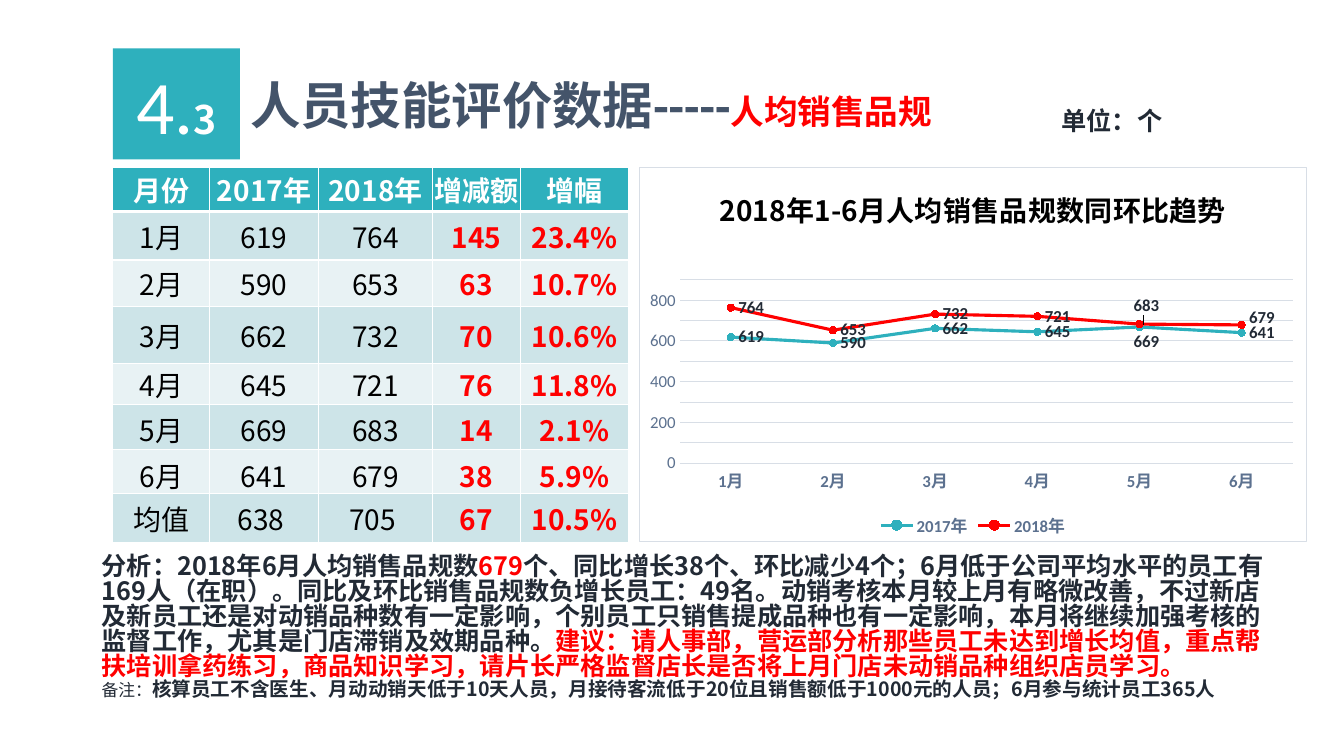
from lxml import etree
from pptx import Presentation
from pptx.chart.data import CategoryChartData
from pptx.dml.color import RGBColor
from pptx.enum.chart import XL_CHART_TYPE as Chart, XL_LABEL_POSITION as LabelPos
from pptx.enum.chart import XL_LEGEND_POSITION as LegendPos, XL_MARKER_STYLE as Marker
from pptx.enum.chart import XL_TICK_MARK as Tick
from pptx.enum.shapes import MSO_SHAPE as Shape
from pptx.enum.text import MSO_ANCHOR as Anchor, MSO_AUTO_SIZE as AutoSize, PP_ALIGN as Align
from pptx.oxml import parse_xml
from pptx.oxml.ns import nsdecls, qn
from pptx.util import Inches, Pt

TEAL = RGBColor(0x2E, 0xB0, 0xBD)
RED = RGBColor(0xFF, 0x00, 0x00)
WHITE = RGBColor(0xFF, 0xFF, 0xFF)
BLACK = RGBColor(0x00, 0x00, 0x00)
INK = RGBColor(0x22, 0x2A, 0x35)
SLATE = RGBColor(0x44, 0x54, 0x6A)
AXIS = RGBColor(0x5C, 0x71, 0x8F)
RULE = RGBColor(0xD8, 0xDE, 0xE6)
BANDS = RGBColor(0xE8, 0xF2, 0xF4), RGBColor(0xCD, 0xE4, 0xE8)
LATIN, CJK = "Calibri", "Noto Sans CJK SC"

HEADERS = ["月份", "2017年", "2018年", "增减额", "增幅"]
ROWS = [
    ["1月", "619", "764", "145", "23.4%"],
    ["2月", "590", "653", "63", "10.7%"],
    ["3月", "662", "732", "70", "10.6%"],
    ["4月", "645", "721", "76", "11.8%"],
    ["5月", "669", "683", "14", "2.1%"],
    ["6月", "641", "679", "38", "5.9%"],
    ["均值", "638 ", "705 ", "67", "10.5%"],
]
COL_WIDTHS = [0.96, 1.08, 1.13, 0.87, 1.08]
ROW_HEIGHTS = [0.44, 0.48, 0.46, 0.57, 0.4, 0.45, 0.39, 0.49]
TIGHT_ROWS = 5  # the rows from the top whose cells have no margins


def style(font, size, color, bold=False, name=LATIN):
    font.size, font.bold, font.name = Pt(size), bold, name
    font.color.rgb = color


def rule_xml():
    return (f'<a:ln {nsdecls("a")} w="{Pt(0.75)}"><a:solidFill>'
            f'<a:srgbClr val="{RULE}"/></a:solidFill></a:ln>')


def manual_layout(x, y, extra=""):
    return parse_xml(f'<c:layout {nsdecls("c")}><c:manualLayout>{extra}'
                     f'<c:x val="{x}"/><c:y val="{y}"/></c:manualLayout></c:layout>')


class Page:
    """The current slide; places are given in percent of its size."""

    def __init__(self, prs):
        self.prs = prs
        self.s = prs.slides.add_slide(prs.slide_layouts[5])

    def box(self, x, y, w, h):
        width, height = self.prs.slide_width, self.prs.slide_height
        return [int(v * side / 100) for v, side in
                ((x, width), (y, height), (w, width), (h, height))]

    def runs(self, p, parts):
        for text, size, color, bold, name in parts:
            r = p.add_run()
            r.text = text
            style(r.font, size, color, bold, name)
            ea = etree.SubElement(r.font._element, qn("a:ea"))
            ea.set("typeface", CJK)

    def title(self, place, parts):
        sp = self.s.shapes.title
        sp.left, sp.top, sp.width, sp.height = self.box(*place)
        tf = sp.text_frame
        tf.auto_size, tf.vertical_anchor = AutoSize.NONE, Anchor.TOP
        tf.paragraphs[0].alignment = Align.LEFT
        self.runs(tf.paragraphs[0], parts)

    def badge(self, place, parts):
        sp = self.s.shapes.add_shape(Shape.RECTANGLE, *self.box(*place))
        sp.shadow.inherit = False
        sp.fill.solid()
        sp.fill.fore_color.rgb = TEAL
        sp.line.fill.background()
        sp.text_frame.vertical_anchor = Anchor.MIDDLE
        p = sp.text_frame.paragraphs[0]
        p.alignment = Align.CENTER
        self.runs(p, parts)

    def text(self, place, paragraphs, spacing=1.0):
        tf = self.s.shapes.add_textbox(*self.box(*place)).text_frame
        tf.word_wrap = True
        for i, parts in enumerate(paragraphs):
            p = tf.add_paragraph() if i else tf.paragraphs[0]
            p.line_spacing = spacing
            self.runs(p, parts)

    def borders(self, cell, row):
        tc_pr = cell._tc.get_or_add_tcPr()
        widths = {"L": 1, "R": 1, "T": 3 if row == 1 else 1, "B": 3 if row == 0 else 1}
        for i, (side, width) in enumerate(widths.items()):
            tc_pr.insert(i, parse_xml(
                f'<a:ln{side} {nsdecls("a")} w="{Pt(width)}"><a:solidFill>'
                f'<a:srgbClr val="{WHITE}"/></a:solidFill></a:ln{side}>'))

    def table(self, place, rows):
        table = self.s.shapes.add_table(len(rows), len(rows[0]), *self.box(*place)).table
        for col, width in zip(table.columns, COL_WIDTHS):
            col.width = Inches(width)
        for i, (row, height) in enumerate(zip(table.rows, ROW_HEIGHTS)):
            row.height = Inches(height)
            for j, cell in enumerate(row.cells):
                cell.fill.solid()
                cell.fill.fore_color.rgb = BANDS[i % 2] if i else TEAL
                cell.vertical_anchor = Anchor.MIDDLE
                if i < TIGHT_ROWS:
                    cell.margin_left = cell.margin_right = 0
                    cell.margin_top = cell.margin_bottom = 0
                self.borders(cell, i)
                color = WHITE if i == 0 else RED if j > 2 else BLACK
                p = cell.text_frame.paragraphs[0]
                p.alignment = Align.CENTER
                self.runs(p, [(rows[i][j], 20, color, i == 0 or j > 2, CJK)])

    def line_chart(self, place, title, cats, series):
        data = CategoryChartData()
        data.categories = cats
        for name, values, *_ in series:
            data.add_series(name, values)
        chart = self.s.shapes.add_chart(Chart.LINE_MARKERS, *self.box(*place), data).chart
        style(chart.font, 10, INK)
        # Title, legend and frame
        chart.has_title = True
        self.runs(chart.chart_title.text_frame.paragraphs[0], [(title, 20, BLACK, True, CJK)])
        chart.has_legend = True
        chart.legend.position = LegendPos.BOTTOM
        chart.legend.include_in_layout = False
        style(chart.legend.font, 12, AXIS, True)
        chart._chartSpace.find(qn("c:chart")).addnext(parse_xml(
            f'<c:spPr {nsdecls("c", "a")}><a:solidFill><a:srgbClr val="{WHITE}"/></a:solidFill>'
            f'{rule_xml()}</c:spPr>'))
        # Plot area
        area = chart._chartSpace.find(".//" + qn("c:plotArea"))
        for old in area.findall(qn("c:layout")):
            area.remove(old)
        layout = manual_layout(0.06, 0.3, '<c:layoutTarget val="inner"/>'
                               '<c:xMode val="edge"/><c:yMode val="edge"/>')
        for tag, size in (("c:w", 0.92), ("c:h", 0.49)):
            etree.SubElement(layout[0], qn(tag)).set("val", str(size))
        area.insert(0, layout)
        # Axes
        cat, val = chart.category_axis, chart.value_axis
        for axis in (cat, val):
            axis.major_tick_mark = axis.minor_tick_mark = Tick.NONE
            style(axis.tick_labels.font, 12, AXIS, axis is cat)
        val.minimum_scale, val.maximum_scale = 0, 900
        val.major_unit, val.minor_unit = 200, 100
        val.has_major_gridlines = val.has_minor_gridlines = True
        val.format.line.fill.background()
        for line in (cat.format.line, val.major_gridlines.format.line):
            line.color.rgb, line.width = RULE, Pt(0.75)
        area.find(".//" + qn("c:minorGridlines")).append(parse_xml(
            f'<c:spPr {nsdecls("c")}>{rule_xml()}</c:spPr>'))
        # Series, with the crowded labels moved aside
        chart.plots[0].vary_by_categories = False
        for ser, (_, _, color, shifts) in zip(chart.plots[0].series, series):
            ser.smooth = False
            ser.format.line.color.rgb, ser.format.line.width = color, Pt(2.25)
            ser.marker.style, ser.marker.size = Marker.CIRCLE, 5
            ser.marker.format.fill.solid()
            ser.marker.format.fill.fore_color.rgb = color
            ser.marker.format.line.color.rgb = color
            labels = ser.data_labels
            labels.show_value = True
            for label in (labels, *(ser.points[i].data_label for i in shifts)):
                label.position = LabelPos.RIGHT
                style(label.font, 12, INK, True)
            for item in ser._element.iter(qn("c:dLbl")):
                idx = item.find(qn("c:idx"))
                idx.addnext(manual_layout(*shifts[int(idx.get("val"))]))


def main():
    prs = Presentation()
    prs.slide_width, prs.slide_height = Inches(13.33), Inches(7.5)
    page = Page(prs)
    # Heading
    page.badge((8.4, 6.4, 9.45, 14.67), [("4.", 54, WHITE, False, LATIN), ("3", 28, WHITE, True, CJK)])
    page.title((17.85, 9.07, 70, 9.87), [("人员技能评价数据-----", 36, SLATE, True, LATIN),
                                         ("人均销售品规", 24, RED, True, LATIN)])
    page.text((78.25, 13.33, 9.6, 5.33), [[("单位：个", 18, INK, True, LATIN)]])
    # Analysis and remark
    page.text((6.83, 72.8, 89.42, 24.67), [
        [("分析：2018年6月人均销售品规数", 18, INK, True, CJK),
         ("679", 18, RED, True, CJK),
         ("个、同比增长38个、环比减少4个；6月低于公司平均水平的员工有169人（在职）。"
          "同比及环比销售品规数负增长员工：49名。动销考核本月较上月有略微改善，"
          "不过新店及新员工还是对动销品种数有一定影响，个别员工只销售提成品种也有一定影响，"
          "本月将继续加强考核的监督工作，尤其是门店滞销及效期品种。", 18, INK, True, CJK),
         ("建议：请人事部，营运部分析那些员工未达到增长均值，重点帮扶培训拿药练习，商品知识学习，"
          "请片长严格监督店长是否将上月门店未动销品种组织店员学习。", 18, RED, True, CJK)],
        [("备注：", 12, INK, False, CJK),
         ("核算员工不含医生、月动动销天低于10天人员，月接待客流低于20位且销售额低于1000元的人员；"
          "6月参与统计员工365人", 14, INK, True, CJK)],
    ], spacing=0.83)
    # Monthly figures
    page.table((8.4, 22.13, 38.4, 49.07), [HEADERS] + ROWS)
    months = ROWS[:-1]
    page.line_chart((47.56, 22.13, 49.66, 49.6), "2018年1-6月人均销售品规数同环比趋势",
                    [row[0] for row in months],
                    [(HEADERS[1], [int(row[1]) for row in months], TEAL, {4: (-0.02, 0.04)}),
                     (HEADERS[2], [int(row[2]) for row in months], RED,
                      {4: (-0.02, -0.05), 5: (0, -0.02)})])
    prs.save("out.pptx")


if __name__ == "__main__":
    main()
